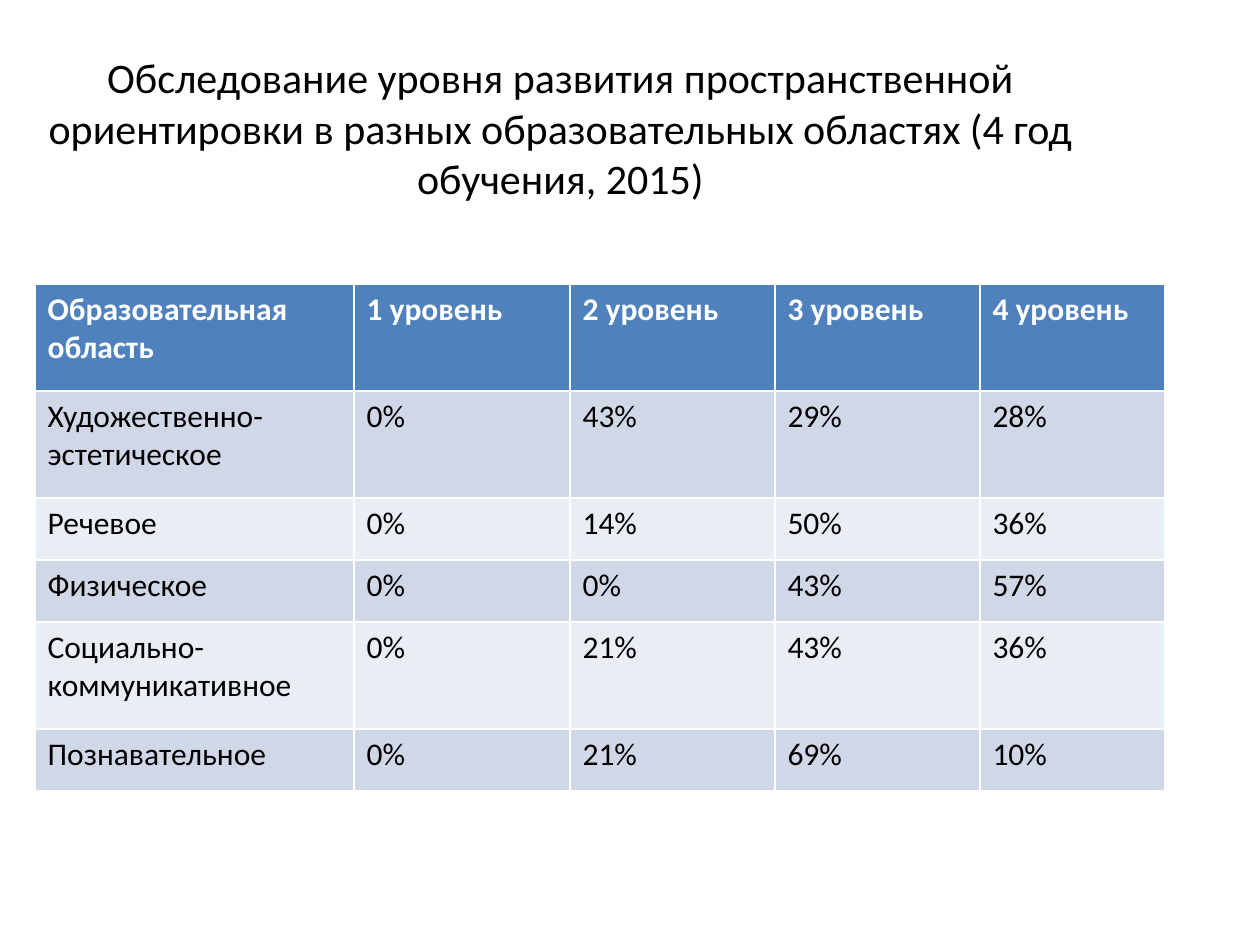
"""Build a slide with a table of spatial orientation levels by educational area."""
import pptx
import pptx.dml.color
import pptx.enum.text
import pptx.util

RGBColor = pptx.dml.color.RGBColor

TITLE = ("Обследование уровня развития пространственной ориентировки "
         "в разных образовательных областях (4 год обучения, 2015)")
ROWS = [
    ("Образовательная область", "1 уровень", "2 уровень", "3 уровень", "4 уровень"),
    ("Художественно-эстетическое", "0%", "43%", "29%", "28%"),
    ("Речевое", "0%", "14%", "50%", "36%"),
    ("Физическое", "0%", "0%", "43%", "57%"),
    ("Социально-коммуникативное", "0%", "21%", "43%", "36%"),
    ("Познавательное", "0%", "21%", "69%", "10%"),
]
COLUMN_WIDTHS = (319, 216, 205, 205, 185)
TALL, SHORT = 107, 62
ROW_HEIGHTS = (TALL, TALL, SHORT, SHORT, TALL, SHORT)
TABLE_LEFT, TABLE_TOP = 35, 284
TITLE_BOX = (25, 26, 1071, 203)

BLACK = RGBColor(0x00, 0x00, 0x00)
WHITE = RGBColor(0xFF, 0xFF, 0xFF)
HEADER_FILL = RGBColor(0x4F, 0x81, 0xBD)
BAND_FILLS = (RGBColor(0xE9, 0xED, 0xF4), RGBColor(0xD0, 0xD8, 0xE8))

TITLE_FORMAT = {"size": 24, "bold": False, "color": BLACK}
HEADER_FORMAT = {"size": 18, "bold": True, "color": WHITE}
BODY_FORMAT = {"size": 18, "bold": False, "color": BLACK}


def px(length):
    return round(length * 914400 / 126)


def write(text_frame, text, text_format):
    run = text_frame.paragraphs[0].add_run()
    run.text = text
    font_values = {"name": "Calibri", "size": pptx.util.Pt(text_format["size"]),
                   "bold": text_format["bold"]}
    for name, value in font_values.items():
        setattr(run.font, name, value)
    run.font.color.rgb = text_format["color"]


def add_title(slide):
    text_frame = slide.shapes.add_textbox(*map(px, TITLE_BOX)).text_frame
    text_frame.word_wrap = True
    text_frame.vertical_anchor = pptx.enum.text.MSO_ANCHOR.MIDDLE
    write(text_frame, TITLE, TITLE_FORMAT)
    text_frame.paragraphs[0].alignment = pptx.enum.text.PP_ALIGN.CENTER


def add_levels_table(slide):
    table = slide.shapes.add_table(
        len(ROWS), len(COLUMN_WIDTHS), px(TABLE_LEFT), px(TABLE_TOP),
        px(sum(COLUMN_WIDTHS)), px(sum(ROW_HEIGHTS))).table
    for column, width in zip(table.columns, COLUMN_WIDTHS):
        column.width = px(width)
    for index, (row, height, texts) in enumerate(zip(table.rows, ROW_HEIGHTS, ROWS)):
        row.height = px(height)
        for cell, text in zip(row.cells, texts):
            cell.fill.solid()
            cell.fill.fore_color.rgb = BAND_FILLS[index % 2] if index else HEADER_FILL
            write(cell.text_frame, text, BODY_FORMAT if index else HEADER_FORMAT)


def main():
    presentation = pptx.Presentation()
    presentation.slide_width = px(1260)
    presentation.slide_height = px(945)
    slide = presentation.slides.add_slide(presentation.slide_layouts[6])
    add_title(slide)
    add_levels_table(slide)
    presentation.save("out.pptx")


if __name__ == "__main__":
    main()
